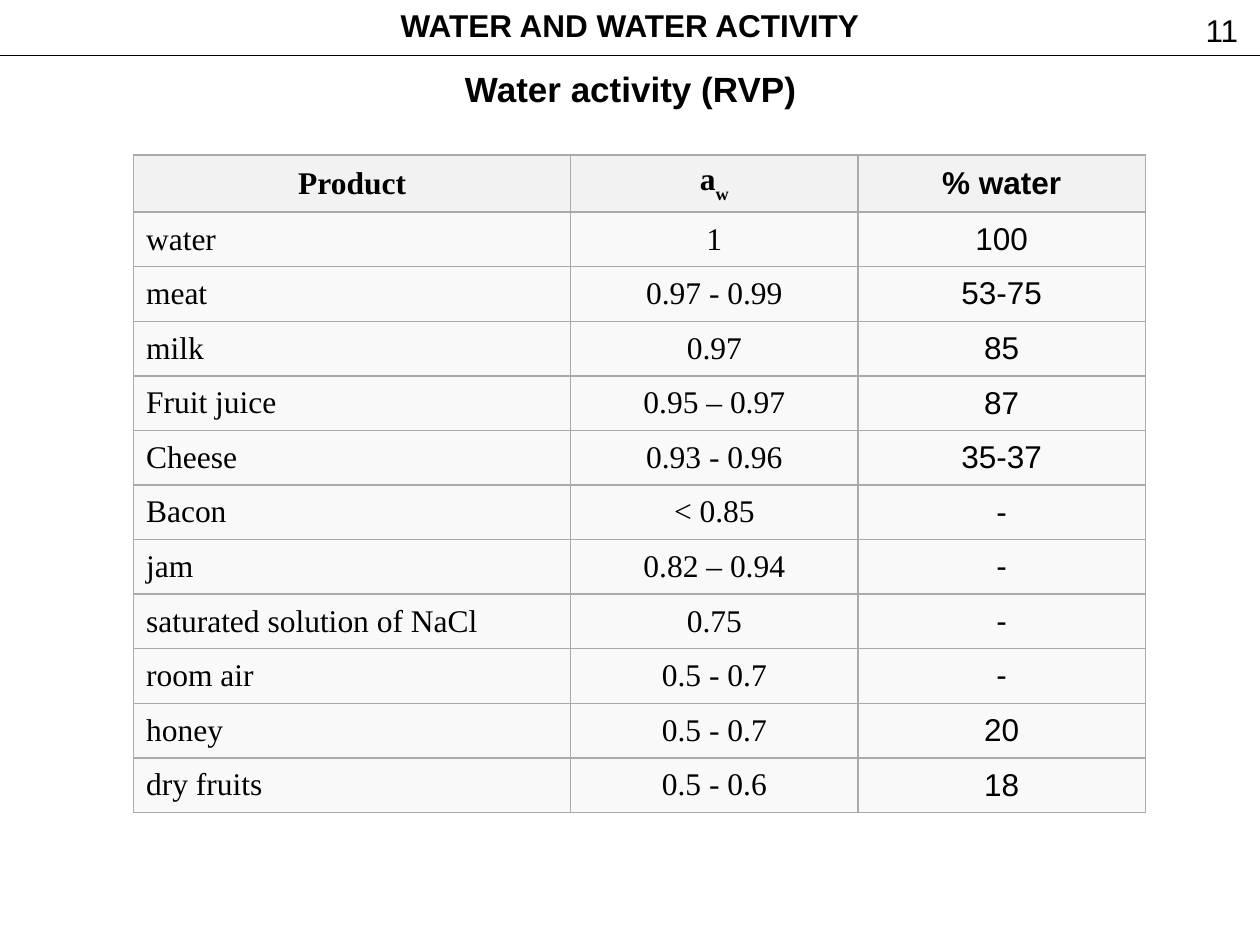
from lxml import etree
from pptx import Presentation
from pptx.dml.color import RGBColor
from pptx.enum.shapes import MSO_CONNECTOR
from pptx.enum.text import MSO_ANCHOR as ANCHOR, MSO_AUTO_SIZE as AUTO, PP_ALIGN as ALIGN
from pptx.oxml import parse_xml
from pptx.oxml.ns import nsdecls, qn
from pptx.util import Inches, Pt

COLORS = {"text": "000000", "header": "F2F2F2", "body": "F9F9F9", "border": "AAAAAA"}
SANS, SERIF = "Arial", "Times New Roman"


def add_text(tf, text, size=18, font=SANS, bold=False, align=ALIGN.CENTER, baseline=None):
    p = tf.paragraphs[0]
    p.alignment = align
    r = p.add_run()
    r.text = text
    r.font.size = Pt(size)
    r.font.name = font
    r.font.bold = bold
    r.font.color.rgb = RGBColor.from_string(COLORS["text"])
    if baseline:
        r.font._element.set("baseline", str(baseline))


def set_borders(cell):
    tcPr = cell._tc.get_or_add_tcPr()
    for i, side in enumerate(("lnL", "lnR", "lnT", "lnB")):
        tcPr.insert(i, parse_xml(
            f'<a:{side} {nsdecls("a")} w="{Pt(1)}"><a:solidFill>'
            f'<a:srgbClr val="{COLORS["border"]}"/></a:solidFill></a:{side}>'))


prs = Presentation()
prs.slide_width, prs.slide_height = Inches(10), Inches(7.5)
s = prs.slides.add_slide(prs.slide_layouts[5])

rule = s.shapes.add_connector(MSO_CONNECTOR.STRAIGHT, 0, Inches(0.44), Inches(10), Inches(0.44))
rule.line.color.rgb = RGBColor.from_string(COLORS["text"])
rule.line.width = Pt(0.75)
etree.SubElement(rule._element.spPr, qn("a:effectLst"))

title = s.shapes.title
title.left, title.top, title.width, title.height = Inches(3.06), 0, Inches(3.88), Inches(0.4)
number = s.shapes.add_textbox(Inches(9.47), Inches(0.04), Inches(0.46), Inches(0.4))
subtitle = s.shapes.add_textbox(Inches(3.58), Inches(0.48), Inches(2.85), Inches(0.44))

for sp, text, size, bold, align, anchor in (
    (title, "WATER AND WATER ACTIVITY", 18, True, ALIGN.CENTER, ANCHOR.MIDDLE),
    (number, "11", 18, False, ALIGN.LEFT, ANCHOR.TOP),
    (subtitle, "Water activity (RVP)", 20, True, ALIGN.CENTER, ANCHOR.MIDDLE),
):
    tf = sp.text_frame
    tf.word_wrap = False
    tf.auto_size = AUTO.SHAPE_TO_FIT_TEXT
    tf.vertical_anchor = anchor
    add_text(tf, text, size=size, bold=bold, align=align)

rows = [
    ("Product", "a", "% water"),
    ("water", "1", "100"),
    ("meat", "0.97 - 0.99", "53-75"),
    ("milk", "0.97", "85"),
    ("Fruit juice", "0.95 – 0.97", "87"),
    ("Cheese", "0.93 - 0.96", "35-37"),
    ("Bacon", "< 0.85", "-"),
    ("jam", "0.82 – 0.94", "-"),
    ("saturated solution of NaCl", "0.75", "-"),
    ("room air", "0.5 - 0.7", "-"),
    ("honey", "0.5 - 0.7", "20"),
    ("dry fruits", "0.5 - 0.6", "18"),
]
table = s.shapes.add_table(len(rows), 3, Inches(1.06), Inches(1.23), Inches(8.03), Inches(5.2)).table
for column, width in zip(table.columns, (3.47, 2.28, 2.28)):
    column.width = Inches(width)

for i, values in enumerate(rows):
    header = i == 0
    for j, text in enumerate(values):
        cell = table.cell(i, j)
        cell.vertical_anchor = ANCHOR.MIDDLE
        cell.fill.solid()
        cell.fill.fore_color.rgb = RGBColor.from_string(COLORS["header" if header else "body"])
        set_borders(cell)
        add_text(cell.text_frame, text, font=SANS if j == 2 else SERIF, bold=header,
                 align=ALIGN.CENTER if header or j else ALIGN.LEFT)
add_text(table.cell(0, 1).text_frame, "w", font=SERIF, bold=True, baseline=-30000)

prs.save("out.pptx")
